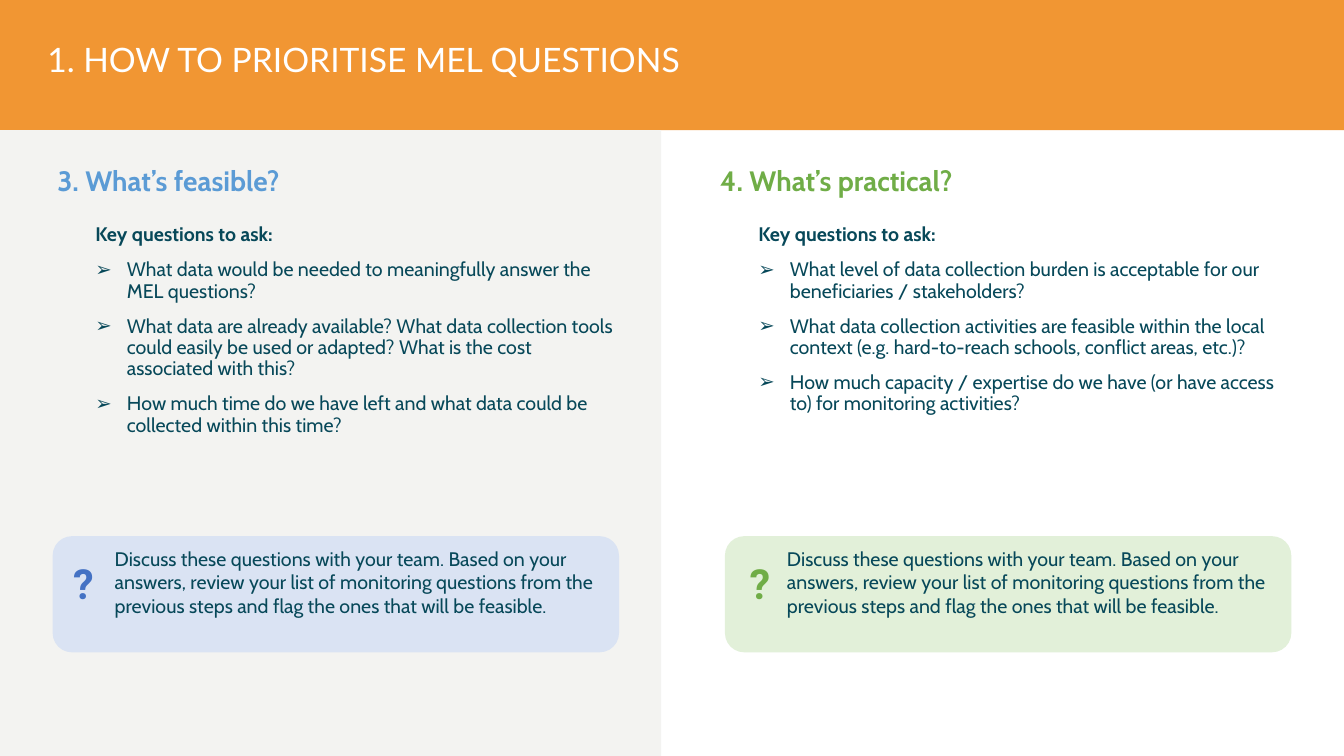
import pptx
import pptx.dml.color
import pptx.enum.shapes
import pptx.enum.text
import pptx.oxml.ns
import pptx.util
import lxml.etree

Pt = pptx.util.Pt
RGBColor = pptx.dml.color.RGBColor
Align = pptx.enum.text.PP_ALIGN
Anchor = pptx.enum.text.MSO_ANCHOR
ShapeType = pptx.enum.shapes.MSO_SHAPE

ORANGE = RGBColor(0xF1, 0x96, 0x33)
PALE_GREY = RGBColor(0xF3, 0xF3, 0xF1)
WHITE = RGBColor(0xFF, 0xFF, 0xFF)
TEAL = RGBColor(0x07, 0x48, 0x59)
SKY = RGBColor(0x5B, 0x9B, 0xD5)
BLUE = RGBColor(0x44, 0x72, 0xC4)
PALE_BLUE = RGBColor(0xDA, 0xE3, 0xF3)
GREEN = RGBColor(0x70, 0xAD, 0x47)
PALE_GREEN = RGBColor(0xE2, 0xF0, 0xD9)

SLIDE_WIDTH, SLIDE_HEIGHT = 960, 540
HEADER_HEIGHT = 93
PANEL_WIDTH = 472.3
RIGHT_COLUMN = 473.5
INSET = 3.6
DISCUSSION = (
    "Discuss these questions with your team. Based on your answers, review your list of "
    "monitoring questions from the previous steps and flag the ones that will be feasible."
)


def write(frame, text, first=True, size=14, font="Cabin", color=TEAL, bold=False,
          align=Align.LEFT, spacing=1.0, before=0, indent=0, bullet=None):
    paragraph = frame.paragraphs[0] if first else frame.add_paragraph()
    paragraph.alignment = align
    paragraph.line_spacing = spacing
    paragraph.space_before = Pt(before)
    if indent:
        properties = paragraph._p.get_or_add_pPr()
        properties.set("marL", str(Pt(indent)))
        properties.set("indent", str(Pt(-indent if bullet else 0)))
        if bullet:
            typeface = lxml.etree.SubElement(properties, pptx.oxml.ns.qn("a:buFont"))
            typeface.set("typeface", "Arial")
            mark = lxml.etree.SubElement(properties, pptx.oxml.ns.qn("a:buChar"))
            mark.set("char", bullet)
    run = paragraph.add_run()
    run.text = text
    run.font.size = Pt(size)
    run.font.name = font
    run.font.bold = bold
    run.font.color.rgb = color


def prepare_frame(shape, anchor=Anchor.TOP):
    frame = shape.text_frame
    frame.word_wrap = True
    frame.vertical_anchor = anchor
    frame.margin_left = frame.margin_right = Pt(INSET)
    frame.margin_top = frame.margin_bottom = Pt(INSET)
    return frame


def add_text_box(slide, left, top, width, height, anchor=Anchor.TOP):
    shape = slide.shapes.add_textbox(Pt(left), Pt(top), Pt(width), Pt(height))
    return prepare_frame(shape, anchor)


def add_block(slide, left, top, width, height, color, kind=ShapeType.RECTANGLE):
    shape = slide.shapes.add_shape(kind, Pt(left), Pt(top), Pt(width), Pt(height))
    shape.shadow.inherit = False
    shape.fill.solid()
    shape.fill.fore_color.rgb = color
    shape.line.fill.background()
    return shape


def add_header(slide, left, top, width, height, title):
    add_block(slide, left, top, width, height, ORANGE)
    frame = add_text_box(slide, left + 30.2, top + 24.5, 649, 39, Anchor.MIDDLE)
    write(frame, title, size=24, font="Lato", color=WHITE, spacing=0.9)


def add_questions(slide, left, top, width, heading, heading_color, questions):
    frame = add_text_box(slide, left + 37.4, top + 23, 391, 52)
    write(frame, heading, size=20, color=heading_color, bold=True, spacing=0.9)
    frame = add_text_box(slide, left + 64.6, top + 64, width - 95, 179)
    write(frame, "Key questions to ask:", bold=True, spacing=0.9)
    for question in questions:
        write(frame, question, first=False, spacing=0.9, before=10, indent=22.5, bullet="➢")


def add_callout(slide, left, top, width, height, fill, mark_color, mark_offset):
    box = add_block(slide, left, top, width, height, fill, ShapeType.ROUNDED_RECTANGLE)
    write(prepare_frame(box), DISCUSSION, indent=36.7)
    frame = add_text_box(slide, left + mark_offset, top + 19, 33, 36.7)
    write(frame, "?", size=29.6, font="Roboto", color=mark_color, bold=True,
          align=Align.CENTER, spacing=0.8)


def build_slide(presentation):
    slide = presentation.slides.add_slide(presentation.slide_layouts[6])
    add_header(slide, 0, 0, SLIDE_WIDTH, HEADER_HEIGHT, "1. HOW TO PRIORITISE MEL QUESTIONS")
    add_block(slide, 0, HEADER_HEIGHT, PANEL_WIDTH, SLIDE_HEIGHT - HEADER_HEIGHT, PALE_GREY)
    add_questions(slide, 0, HEADER_HEIGHT, PANEL_WIDTH, "3. What’s feasible?", SKY, [
        "What data would be needed to meaningfully answer the MEL questions?",
        "What data are already available? What data collection tools could easily be used "
        "or adapted? What is the cost associated with this?",
        "How much time do we have left and what data could be collected within this time?",
    ])
    add_questions(slide, RIGHT_COLUMN, HEADER_HEIGHT, SLIDE_WIDTH - RIGHT_COLUMN,
                  "4. What’s practical?", GREEN, [
        "What level of data collection burden is acceptable for our beneficiaries / stakeholders?",
        "What data collection activities are feasible within the local context "
        "(e.g. hard-to-reach schools, conflict areas, etc.)?",
        "How much capacity / expertise do we have (or have access to) for monitoring activities?",
    ])
    add_callout(slide, 37.6, 383, 404.6, 83, PALE_BLUE, BLUE, 5.6)
    add_callout(slide, 517.8, 383, 404.6, 83, PALE_GREEN, GREEN, 8.6)


def main():
    presentation = pptx.Presentation()
    presentation.slide_width = Pt(SLIDE_WIDTH)
    presentation.slide_height = Pt(SLIDE_HEIGHT)
    build_slide(presentation)
    presentation.save("out.pptx")


if __name__ == "__main__":
    main()
